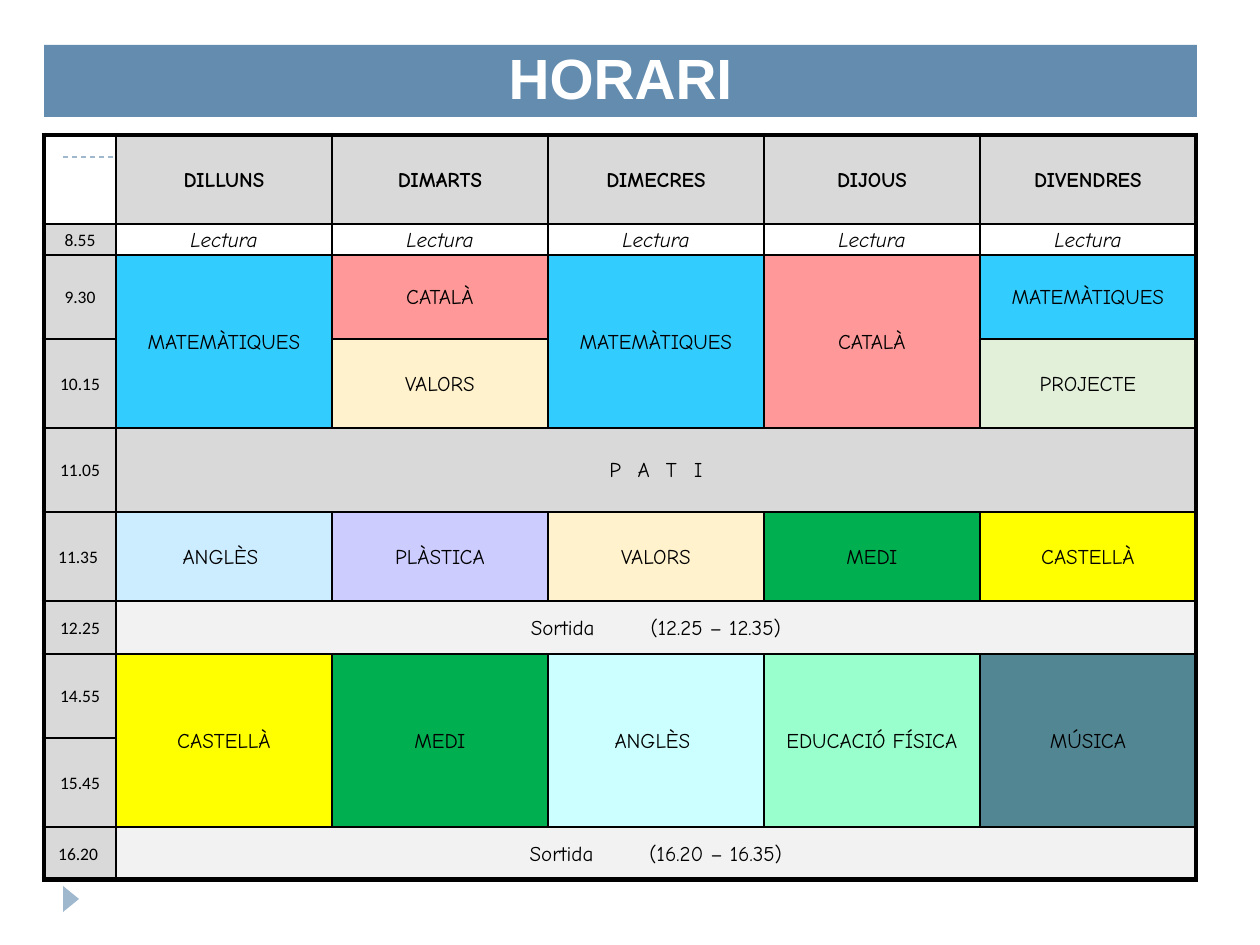
from dataclasses import dataclass

from lxml import etree
from pptx import Presentation
from pptx.dml.color import RGBColor
from pptx.enum.dml import MSO_LINE
from pptx.enum.shapes import MSO_CONNECTOR, MSO_SHAPE
from pptx.enum.text import MSO_ANCHOR, MSO_AUTO_SIZE, PP_ALIGN
from pptx.oxml.ns import qn
from pptx.util import Pt

STRAIGHT = MSO_CONNECTOR.STRAIGHT
TRIANGLE = MSO_SHAPE.ISOSCELES_TRIANGLE
DASH = MSO_LINE.DASH
MIDDLE, BOTTOM = MSO_ANCHOR.MIDDLE, MSO_ANCHOR.BOTTOM
NO_AUTOFIT = MSO_AUTO_SIZE.NONE
CENTER = PP_ALIGN.CENTER

EMU_PER_PX = 914400 / 126
COLUMNS = [72] + [216] * 5
ROWS = [89, 31, 84, 89, 84, 89, 53, 84, 89, 53]
DAYS = ["DILLUNS", "DIMARTS", "DIMECRES", "DIJOUS", "DIVENDRES"]
TIMES = ["8.55", "9.30", "10.15", "11.05", "11.35 ", "12.25", "14.55", "15.45", "16.20 "]


@dataclass(frozen=True)
class Theme:
    """Colours, fonts and type sizes of the timetable."""
    banner: str = "638CAE"
    accent: str = "9FB8CD"
    white: str = "FFFFFF"
    ink: str = "000000"
    header: str = "D9D9D9"
    leaving: str = "F2F2F2"
    maths: str = "33CCFF"
    catalan: str = "FF9999"
    values: str = "FFF2CC"
    project: str = "E2EFD9"
    english: str = "CCECFF"
    english_afternoon: str = "CCFFFF"
    art: str = "CCCCFF"
    science: str = "00B050"
    spanish: str = "FFFF00"
    sport: str = "99FFCC"
    music: str = "528693"
    title_font: str = "Arial"
    time_font: str = "Calibri"
    lesson_font: str = "Comic Neue"
    title_size: float = 32.4
    time_size: int = 10
    lesson_size: int = 12
    thin: int = 1
    thick: int = 3


THEME = Theme()
# fmt: (row, column, text, fill, row span)
LESSONS = [
    (2, 1, "MATEMÀTIQUES", THEME.maths, 2),
    (2, 2, "CATALÀ", THEME.catalan, 1),
    (2, 3, "MATEMÀTIQUES", THEME.maths, 2),
    (2, 4, "CATALÀ", THEME.catalan, 2),
    (2, 5, "MATEMÀTIQUES", THEME.maths, 1),
    (3, 2, "VALORS", THEME.values, 1),
    (3, 5, "PROJECTE", THEME.project, 1),
    (5, 1, "ANGLÈS ", THEME.english, 1),
    (5, 2, "PLÀSTICA", THEME.art, 1),
    (5, 3, "VALORS", THEME.values, 1),
    (5, 4, "MEDI", THEME.science, 1),
    (5, 5, "CASTELLÀ", THEME.spanish, 1),
    (7, 1, "CASTELLÀ", THEME.spanish, 2),
    (7, 2, "MEDI", THEME.science, 2),
    (7, 3, "ANGLÈS ", THEME.english_afternoon, 2),
    (7, 4, "EDUCACIÓ FÍSICA", THEME.sport, 2),
    (7, 5, "MÚSICA", THEME.music, 2),
]


def px(length):
    """Turn px into EMU."""
    return round(length * EMU_PER_PX)


def add_text(paragraph, text, size, font, color=THEME.ink, bold=False, italic=False, spacing=0):
    """Append one formatted run to a centred paragraph."""
    paragraph.alignment = CENTER
    run = paragraph.add_run()
    run.text = text
    run.font.size, run.font.name = Pt(size), font
    run.font.bold, run.font.italic = bold, italic
    run.font.color.rgb = RGBColor.from_string(color)
    if spacing:
        run.font._element.set("spc", str(spacing * 100))


def set_borders(cell, widths):
    """Draw the left, right, top and bottom borders of a cell."""
    properties = cell._tc.get_or_add_tcPr()
    for index, (side, width) in enumerate(zip("LRTB", widths)):
        line = etree.Element(qn(f"a:ln{side}"), w=str(Pt(width)))
        fill = etree.SubElement(line, qn("a:solidFill"))
        etree.SubElement(fill, qn("a:srgbClr"), val=THEME.ink)
        properties.insert(index, line)


class TimetableSlide:
    """The theme and the slide that the timetable is drawn on."""

    def __init__(self, slide, theme):
        """Keep the slide and its theme."""
        self.slide, self.theme = slide, theme
        self.table = None

    def title(self, text, left, top, width, height):
        """Turn the title placeholder into a banner."""
        shape = self.slide.shapes.title
        shape.left, shape.top, shape.width, shape.height = map(px, (left, top, width, height))
        shape.fill.solid()
        shape.fill.fore_color.rgb = RGBColor.from_string(self.theme.banner)
        frame = shape.text_frame
        frame.auto_size, frame.vertical_anchor = NO_AUTOFIT, BOTTOM
        add_text(frame.paragraphs[0], text, self.theme.title_size, self.theme.title_font,
                 self.theme.white, bold=True)

    def dashed_rule(self, left, right, y):
        """Draw a horizontal dashed line."""
        rule = self.slide.shapes.add_connector(STRAIGHT, px(left), px(y), px(right), px(y))
        rule.line.color.rgb = RGBColor.from_string(self.theme.accent)
        rule.line.width, rule.line.dash_style = Pt(0.75), DASH
        etree.SubElement(rule._element.spPr, qn("a:effectLst"))

    def marker(self, left, top, width, height):
        """Draw a triangle that points right."""
        shape = self.slide.shapes.add_shape(TRIANGLE, *map(px, (left, top, width, height)))
        shape.rotation = 90
        shape.shadow.inherit = False
        shape.fill.solid()
        shape.fill.fore_color.rgb = RGBColor.from_string(self.theme.accent)
        shape.line.fill.background()

    def grid(self, left, top):
        """Add the empty table with its column widths and row heights."""
        frame = self.slide.shapes.add_table(len(ROWS), len(COLUMNS), px(left), px(top),
                                            px(sum(COLUMNS)), px(sum(ROWS)))
        self.table = frame.table
        self.table.first_row = self.table.horz_banding = False
        for column, width in zip(self.table.columns, COLUMNS):
            column.width = px(width)
        for row, height in zip(self.table.rows, ROWS):
            row.height = px(height)
        for cell in self.table.iter_cells():
            cell.fill.background()
            cell.margin_left = cell.margin_right = px(9)
            cell.margin_top = cell.margin_bottom = 0
            cell.vertical_anchor = MIDDLE

    def entry(self, row, column, text, fill=None, rows=1, columns=1, **style):
        """Fill one cell or merged block and return its paragraph."""
        cell = self.table.cell(row, column)
        if rows * columns > 1:
            cell.merge(self.table.cell(row + rows - 1, column + columns - 1))
        if fill:
            cell.fill.solid()
            cell.fill.fore_color.rgb = RGBColor.from_string(fill)
        paragraph = cell.text_frame.paragraphs[0]
        paragraph.line_spacing, paragraph.space_after = 1.07, Pt(8)
        style = {"size": self.theme.lesson_size, "font": self.theme.lesson_font} | style
        add_text(paragraph, text, **style)
        return paragraph

    def leaving(self, row, hours):
        """Fill a full-width row with the leaving time."""
        size, font = self.theme.lesson_size, self.theme.lesson_font
        paragraph = self.entry(row, 1, "Sortida", self.theme.leaving, columns=len(DAYS))
        add_text(paragraph, " ", size, font, spacing=28)
        add_text(paragraph, hours, size, font)

    def borders(self):
        """Frame the table thickly and divide its cells thinly."""
        for row in range(len(ROWS)):
            for column in range(len(COLUMNS)):
                cell = self.table.cell(row, column)
                outer = (column == 0, column + cell.span_width == len(COLUMNS),
                         row == 0, row + cell.span_height == len(ROWS))
                set_borders(cell, [self.theme.thick if edge else self.theme.thin for edge in outer])


def main():
    """Build the timetable and save it."""
    presentation = Presentation()
    presentation.slide_width, presentation.slide_height = px(1260), px(945)
    slide = presentation.slides.add_slide(presentation.slide_layouts[5])
    timetable = TimetableSlide(slide, THEME)
    timetable.dashed_rule(63, 1197, 157)
    timetable.marker(58, 891, 26, 16)
    timetable.title("HORARI", 44, 45, 1153, 72)
    timetable.grid(44, 135)
    for column, day in enumerate(DAYS, 1):
        timetable.entry(0, column, day, THEME.header, bold=True)
        timetable.entry(1, column, "Lectura", italic=True)
    for row, time in enumerate(TIMES, 1):
        timetable.entry(row, 0, time, THEME.header, size=THEME.time_size, font=THEME.time_font)
    for lesson in LESSONS:
        timetable.entry(*lesson)
    timetable.entry(4, 1, "PATI", THEME.header, columns=len(DAYS), spacing=10)
    timetable.leaving(6, "(12.25 – 12.35)")
    timetable.leaving(9, "(16.20 – 16.35)")
    timetable.borders()
    presentation.save("out.pptx")


if __name__ == "__main__":
    main()
